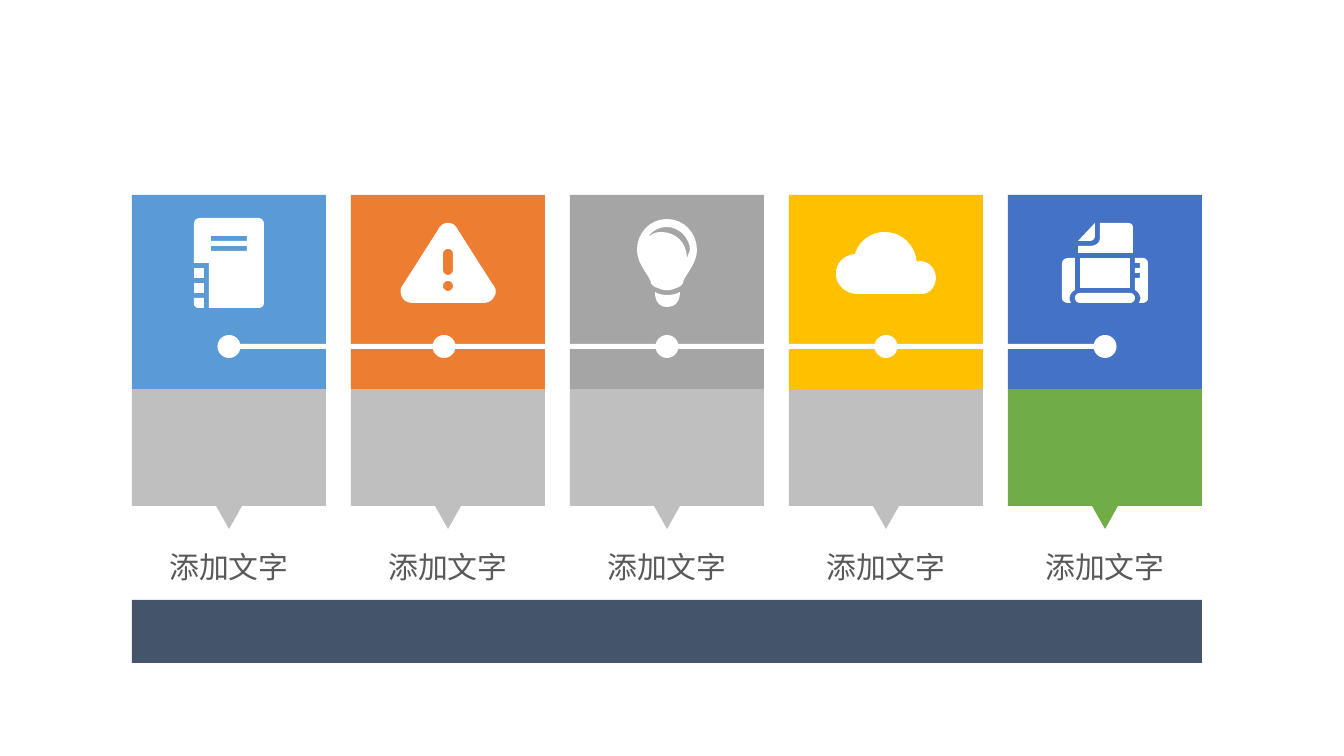
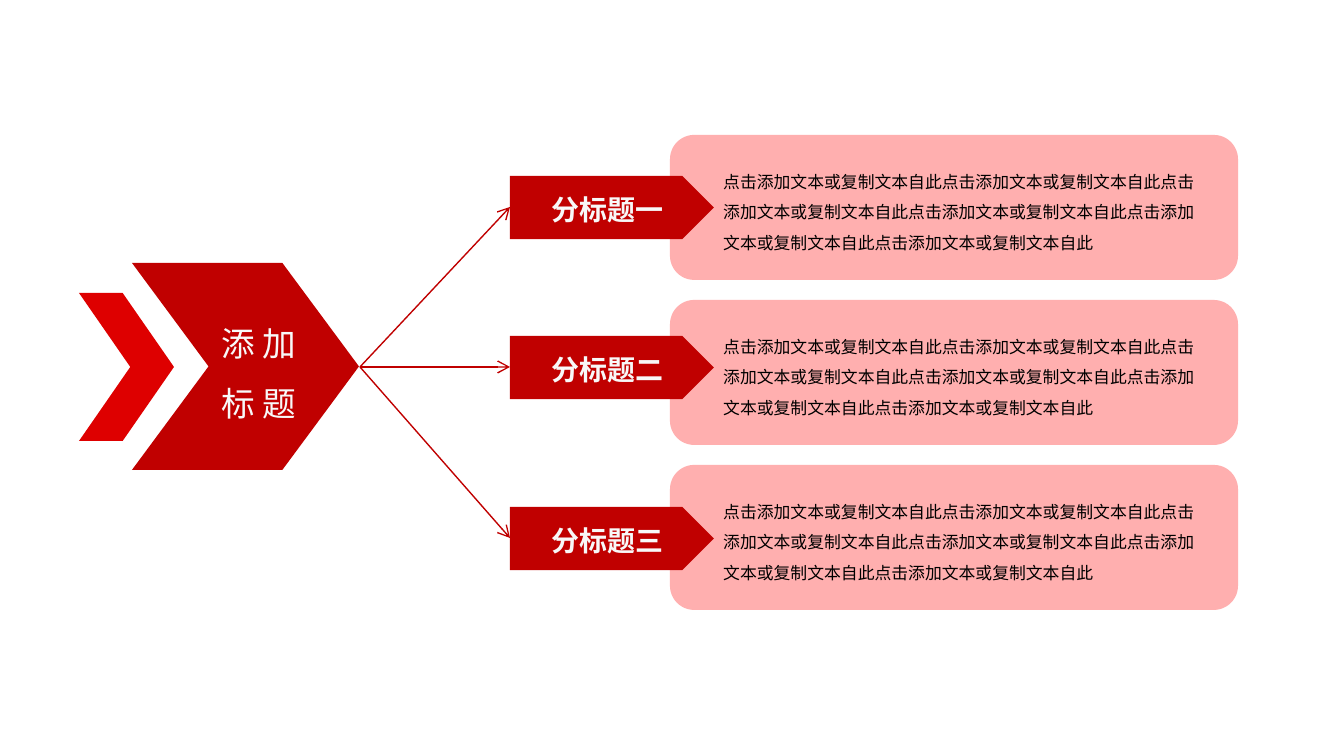
from lxml.etree import SubElement
from pptx import Presentation
from pptx.dml.color import RGBColor
from pptx.enum.shapes import MSO_CONNECTOR, MSO_SHAPE
from pptx.enum.text import MSO_ANCHOR, MSO_AUTO_SIZE, PP_ALIGN
from pptx.oxml.ns import qn
from pptx.util import Pt

# Shared look
PX = 914400 / 134.4
SLIDE_SIZE = (1344, 756)
CJK_FONT = "Noto Sans CJK SC"
WHITE, GREY, GREEN, SLATE = "FFFFFF", "BFBFBF", "70AD47", "44546A"
RED, BRIGHT_RED, PINK = "C00000", "DE0000", "FFAFAF"
NARROW_INSETS = dict(margin_left=9, margin_right=9, margin_top=5, margin_bottom=5)
LABEL_FONT = dict(name=CJK_FONT, size=16, color="595959")
DETAIL_FONT = dict(name=CJK_FONT, size=9, color="000000")
TOPIC_FONT = dict(name="Calibri", size=18, color="F8F8F8")
SPACE_FONT = dict(name="Calibri", size=18, color=WHITE)
TAG_FONT = dict(name="Arial", size=15, color="F8F8F8", bold=True)


def rounded_box(x, y, width, height, radius=0):
    """Closed outline; two numbers make a line, six make a cubic curve."""
    right, bottom = x + width, y + height
    if not radius:
        return [(x, y), (right, y), (right, bottom), (x, bottom)]
    near, far = radius * 0.45, radius
    return [
        (x + far, y), (right - far, y),
        (right - near, y, right, y + near, right, y + far), (right, bottom - far),
        (right, bottom - near, right - near, bottom, right - far, bottom),
        (x + far, bottom),
        (x + near, bottom, x, bottom - near, x, bottom - far), (x, y + far),
        (x, y + near, x + near, y, x + far, y),
    ]


# Icons: each is a list of parts, each part an outline followed by its holes
NOTEBOOK = [
    [[(204, 308), (199, 308), (196, 308, 194, 306, 194, 304), (194, 298), (204, 298)]],
    [[(200, 218), (258, 218), (262, 218, 264, 221, 264, 224), (264, 302),
      (264, 306, 262, 308, 258, 308), (209, 308), (209, 263), (194, 263),
      (194, 224), (194, 221, 196, 218, 200, 218)],
     rounded_box(211, 236, 36, 5), rounded_box(211, 246, 36, 5)],
    [rounded_box(194, 268, 10, 10)],
    [rounded_box(194, 283, 10, 10)],
]
WARNING = [
    [[(438, 230), (440, 226, 443, 223, 448, 223), (453, 223, 456, 226, 458, 230),
      (493, 285), (496, 288, 497, 293, 494, 297), (492, 301, 488, 303, 483, 303),
      (413, 303), (408, 303, 404, 301, 402, 297), (400, 293, 400, 288, 403, 285)],
     rounded_box(443, 249, 10, 26, 5), rounded_box(443, 281, 10, 10, 5)],
]
BULB = [
    [[(655, 292), (658, 294, 662, 295, 667, 295), (672, 295, 677, 294, 680, 292),
      (680, 301, 676, 307, 667, 307), (659, 307, 655, 301, 655, 292)]],
    [[(667, 219), (684, 219, 697, 233, 697, 250), (697, 265, 683, 277, 683, 283),
      (682, 285, 680, 287, 676, 288), (670, 291, 664, 291, 658, 288),
      (654, 287, 652, 285, 651, 283), (651, 277, 637, 265, 637, 250),
      (637, 233, 650, 219, 667, 219)],
     [(661, 232), (676, 232, 687, 243, 687, 258), (690, 250),
      (690, 238, 679, 227, 667, 227), (659, 227, 652, 231, 648, 237),
      (652, 234, 656, 232, 661, 232)]],
]
CLOUD = [
    [[(855, 254), (859, 241, 871, 232, 885, 232), (902, 232, 915, 245, 917, 262),
      (918, 261, 919, 261, 920, 261), (929, 261, 936, 269, 936, 278),
      (936, 286, 930, 294, 922, 294), (857, 294), (846, 294, 836, 285, 836, 274),
      (836, 263, 844, 255, 855, 254)]],
]
PRINTER = [
    [[(1069, 258), (1075, 258), (1075, 290), (1070, 293, 1068, 298, 1071, 303),
      (1068, 303), (1065, 303, 1062, 301, 1062, 298), (1062, 264),
      (1062, 260, 1065, 258, 1069, 258)]],
    [rounded_box(1075, 293, 60, 10, 5)],
    [[(1135, 290), (1135, 278), (1140, 278), (1140, 273), (1135, 273), (1135, 268),
      (1140, 268), (1140, 263), (1135, 263), (1135, 258), (1142, 258),
      (1146, 258, 1148, 260, 1148, 264), (1148, 298),
      (1148, 301, 1146, 303, 1142, 303), (1139, 303),
      (1142, 298, 1140, 293, 1135, 290)]],
    [[(1078, 241), (1095, 223), (1095, 235), (1095, 239, 1093, 241, 1090, 241)]],
    [[(1078, 246), (1089, 246), (1096, 246, 1100, 243, 1100, 237), (1100, 223),
      (1128, 223), (1131, 223, 1133, 225, 1133, 228), (1133, 253), (1078, 253)]],
    [rounded_box(1080, 258, 50, 30)],
]

# Slide 1 content: label, head colour, foot colour, icon, shift of the timeline dot
STEPS = [
    ("添加文字", "5B9BD5", GREY, NOTEBOOK, 0),
    ("添加文字", "ED7D31", GREY, WARNING, -4),
    ("添加文字", "A5A5A5", GREY, BULB, 0),
    ("添加文字", "FFC000", GREY, CLOUD, 0),
    ("添加文字", "4472C4", GREEN, PRINTER, 0),
]

# Slide 2 content: topic lines, then subtitle, top of its tag, detail
TOPIC = ["添 加", "标 题"]
DETAIL = "点击添加文本或复制文本自此" * 6
BRANCHES = [
    ("分标题一", 176, DETAIL),
    ("分标题二", 336, DETAIL),
    ("分标题三", 507, DETAIL),
]


# Helpers
def px(length):
    return round(length * PX)


def rgb(code):
    return RGBColor.from_string(code)


def paint(shape, fill):
    shape.shadow.inherit = False
    shape.fill.solid()
    shape.fill.fore_color.rgb = rgb(fill)
    shape.line.fill.background()
    return shape


def add_block(shapes, kind, box, fill):
    return paint(shapes.add_shape(kind, *map(px, box)), fill)


def add_run(paragraph, text, font):
    run = paragraph.add_run()
    run.text = text
    values = dict(font, size=Pt(font["size"]))
    run.font.color.rgb = rgb(values.pop("color"))
    for attribute, value in values.items():
        setattr(run.font, attribute, value)
    SubElement(run.font._element, qn("a:ea"), typeface=CJK_FONT)


def write(shape, lines, align=PP_ALIGN.CENTER, spacing=None, **frame_values):
    """Each line is a list of (text, font) runs."""
    frame = shape.text_frame
    for attribute, value in frame_values.items():
        setattr(frame, attribute, px(value) if attribute.startswith("margin") else value)
    for index, line in enumerate(lines):
        paragraph = frame.add_paragraph() if index else frame.paragraphs[0]
        paragraph.alignment = align
        if spacing:
            paragraph.line_spacing = spacing
        for text, font in line:
            add_run(paragraph, text, font)


def flatten(outline, steps=8):
    points = []
    for segment in outline:
        if len(segment) == 2:
            points.append(segment)
            continue
        controls = [points[-1], segment[:2], segment[2:4], segment[4:]]
        for step in range(1, steps + 1):
            t = step / steps
            weights = ((1 - t) ** 3, 3 * t * (1 - t) ** 2, 3 * t * t * (1 - t), t ** 3)
            points.append(tuple(sum(w * c[axis] for w, c in zip(weights, controls))
                                for axis in (0, 1)))
    return [(px(x), px(y)) for x, y in points]


def add_icon(shapes, parts):
    group = shapes.add_group_shape()
    for outlines in parts:
        first, *holes = [flatten(outline) for outline in outlines]
        builder = group.shapes.build_freeform(*first[0])
        builder.add_line_segments(first[1:], close=True)
        for hole in holes:
            builder.move_to(*hole[0])
            builder.add_line_segments(hole[1:], close=True)
        paint(builder.convert_to_shape(), WHITE)


def add_arrow(shapes, start, end):
    arrow = shapes.add_connector(MSO_CONNECTOR.STRAIGHT, *map(px, start + end))
    arrow.line.color.rgb = rgb(RED)
    arrow.line.width = Pt(0.75)
    SubElement(arrow.line._get_or_add_ln(), qn("a:tailEnd"), type="arrow")
    SubElement(arrow._element.spPr, qn("a:effectLst"))


# Slide 1: five cards on a timeline
def build_steps(shapes):
    left, top, width, pitch = 132, 195, 194, 219
    foot_top, foot_height = top + width, 117
    pointer_top = foot_top + foot_height
    dot, dot_top = 23, 335
    lefts = [left + pitch * index for index in range(len(STEPS))]
    centers = [x + width / 2 for x in lefts]

    for x, (_, head, foot, _, _) in zip(lefts, STEPS):
        add_block(shapes, MSO_SHAPE.RECTANGLE, (x, top, width, width), head)
        add_block(shapes, MSO_SHAPE.RECTANGLE, (x, foot_top, width, foot_height), foot)

    for _, _, _, icon, _ in STEPS:
        add_icon(shapes, icon)

    timeline = shapes.add_group_shape().shapes
    for center, (_, _, _, _, shift) in zip(centers, STEPS):
        add_block(timeline, MSO_SHAPE.OVAL,
                  (center + shift - dot / 2, dot_top, dot, dot), WHITE)
    add_block(timeline, MSO_SHAPE.RECTANGLE,
              (centers[0] - 7, 344, centers[-1] - centers[0], 5), WHITE)

    for center, (label, _, foot, _, _) in zip(centers, STEPS):
        pointer = add_block(shapes, MSO_SHAPE.ISOSCELES_TRIANGLE,
                            (center - 13, pointer_top, 26, 23), foot)
        pointer.rotation = 180
        caption = shapes.add_textbox(*map(px, (center - 70, 544, 140, 46)))
        write(caption, [[(label, LABEL_FONT)]], word_wrap=False,
              auto_size=MSO_AUTO_SIZE.SHAPE_TO_FIT_TEXT, **NARROW_INSETS)

    add_block(shapes, MSO_SHAPE.RECTANGLE,
              (left, 600, lefts[-1] + width - left, 63), SLATE)


# Slide 2: one topic branching into three
def build_branches(shapes):
    card_left, card_top, card_pitch = 670, 135, 165
    tag_left, tag_width, tag_height = 510, 204, 63
    tip = (360, 367)

    for index, (subtitle, tag_top, detail) in enumerate(BRANCHES):
        y = card_top + card_pitch * index
        card = shapes.add_group_shape().shapes
        add_block(card, MSO_SHAPE.ROUNDED_RECTANGLE, (card_left, y, 568, 145), PINK)
        body = add_block(card, MSO_SHAPE.RECTANGLE,
                         (card_left + 40, y + 20, 508, 105), PINK)
        write(body, [[(detail, DETAIL_FONT)]], PP_ALIGN.LEFT, 1.5, word_wrap=True,
              vertical_anchor=MSO_ANCHOR.TOP, auto_size=MSO_AUTO_SIZE.SHAPE_TO_FIT_TEXT)
        tag = add_block(shapes, MSO_SHAPE.PENTAGON,
                        (tag_left, tag_top, tag_width, tag_height), RED)
        write(tag, [[(" ", SPACE_FONT), (subtitle, TAG_FONT)]], word_wrap=True,
              vertical_anchor=MSO_ANCHOR.MIDDLE, **NARROW_INSETS)

    for box, point, fill in [((132, 263, 227, 207), 0.37, RED),
                             ((79, 293, 95, 148), 0.54, BRIGHT_RED)]:
        add_block(shapes, MSO_SHAPE.CHEVRON, box, fill).adjustments[0] = point
    topic = shapes.add_textbox(*map(px, (208, 296, 102, 136)))
    write(topic, [[(line, TOPIC_FONT)] for line in TOPIC], spacing=1.5,
          word_wrap=False, auto_size=MSO_AUTO_SIZE.SHAPE_TO_FIT_TEXT)

    for _, tag_top, _ in BRANCHES:
        add_arrow(shapes, tip, (tag_left, tag_top + tag_height // 2))


def main():
    deck = Presentation()
    deck.slide_width, deck.slide_height = map(px, SLIDE_SIZE)
    blank = deck.slide_layouts[6]
    for build in (build_steps, build_branches):
        build(deck.slides.add_slide(blank).shapes)
    deck.save("out.pptx")


if __name__ == "__main__":
    main()
